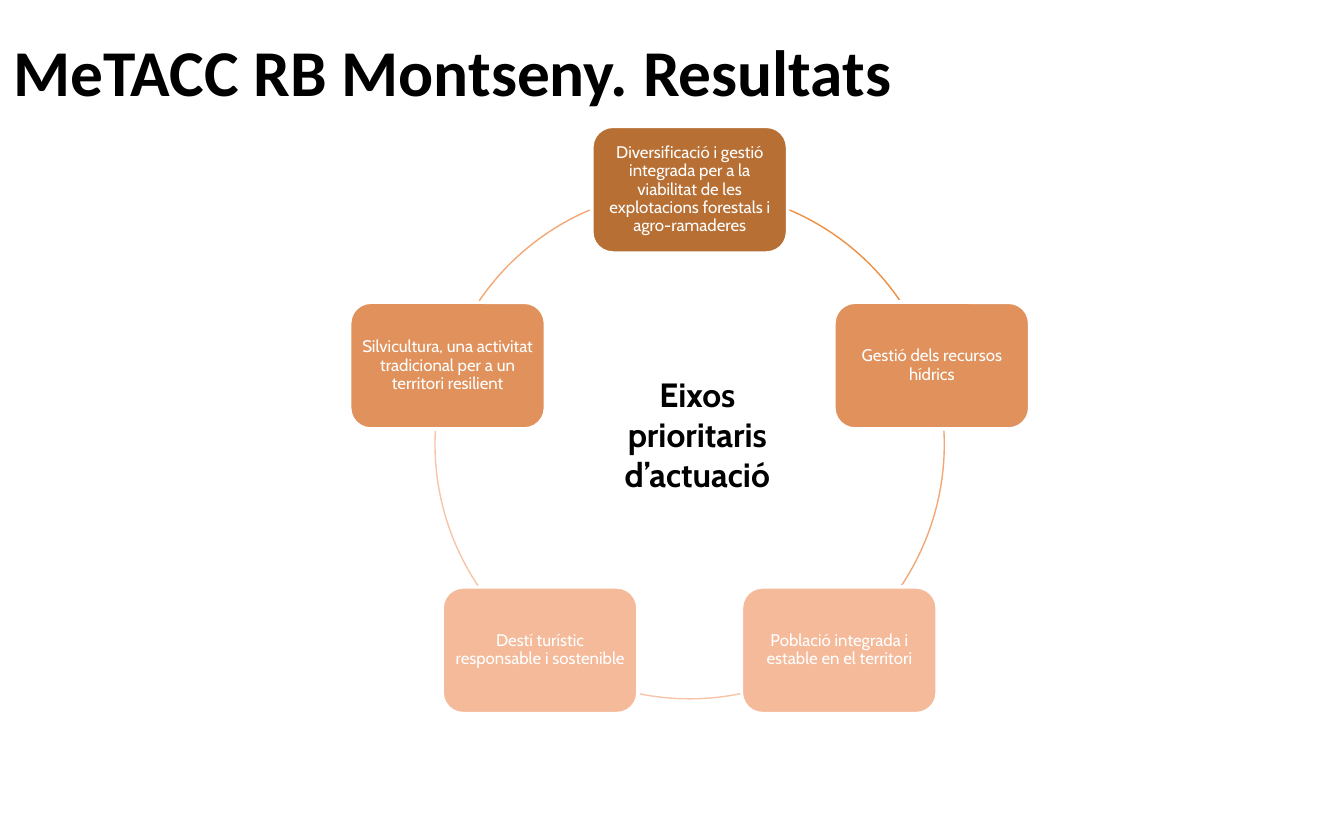
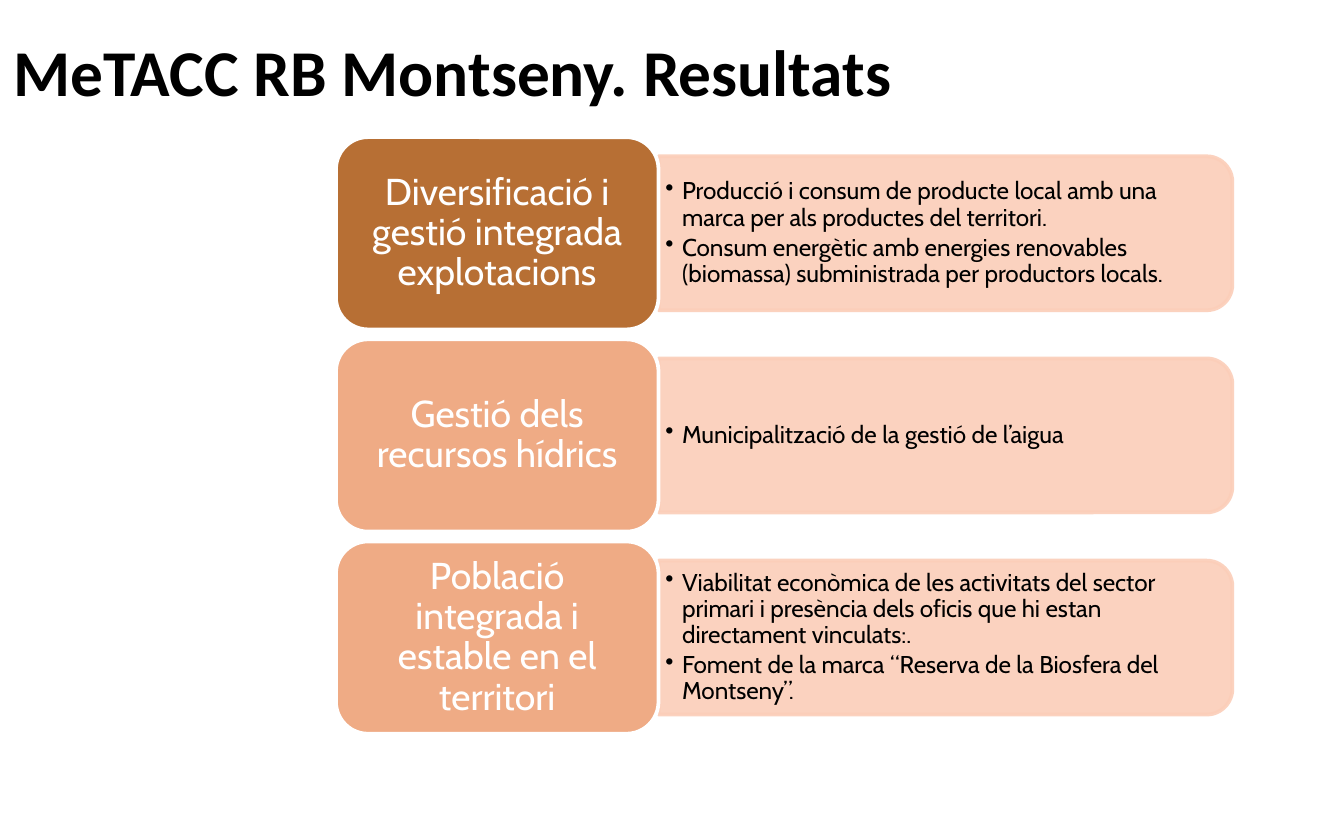
from dataclasses import dataclass
from math import cos, radians, sin

from pptx import Presentation
from pptx.dml.color import RGBColor
from pptx.enum.shapes import MSO_SHAPE as Shape
from pptx.enum.text import MSO_ANCHOR as Anchor, MSO_AUTO_SIZE as AutoSize, PP_ALIGN as Align
from pptx.oxml.ns import qn
from pptx.util import Pt
from lxml.etree import SubElement


@dataclass(frozen=True)
class Theme:
    white: str = "FFFFFF"
    black: str = "000000"
    brown: str = "B76F34"
    copper: str = "E0915C"
    salmon: str = "EFAB85"
    peach: str = "F4BA9A"
    pale: str = "FBCEB9"
    arc_strong: str = "EC8F43"
    arc_medium: str = "F3A774"
    arc_light: str = "F9C3A7"
    heading_font: str = "Calibri"
    body_font: str = "Cabin"
    title_size: float = 35
    head_size: float = 20
    center_size: float = 18
    bullet_size: float = 13
    axis_size: float = 9
    outline: float = 2
    arc_line: float = 0.75


THEME = Theme()
TITLE = "MeTACC RB Montseny. Resultats"


@dataclass(frozen=True)
class Box:
    left: float
    top: float
    width: float
    height: float

    @classmethod
    def around(cls, x: float, y: float, width: float, height: float) -> "Box":
        return cls(x - width / 2, y - height / 2, width, height)

    def lengths(self) -> tuple:
        return Pt(self.left), Pt(self.top), Pt(self.width), Pt(self.height)


@dataclass(frozen=True)
class Axis:
    text: str
    fill: str


@dataclass(frozen=True)
class Arc:
    start: float
    end: float
    color: str


@dataclass(frozen=True)
class Measure:
    head: str
    fill: str
    bullets: tuple


# Clockwise from the top
AXES = (
    Axis("Diversificació i gestió integrada per a la viabilitat de les "
         "explotacions forestals i agro-ramaderes", THEME.brown),
    Axis("Gestió dels recursos hídrics", THEME.copper),
    Axis("Població integrada i estable en el territori", THEME.peach),
    Axis("Destí turístic responsable i sostenible", THEME.peach),
    Axis("Silvicultura, una activitat tradicional per a un territori resilient", THEME.copper),
)
# Degrees clockwise from three o'clock
ARCS = (
    Arc(293.1, 325.7, THEME.arc_strong),
    Arc(357, 33.7, THEME.arc_medium),
    Arc(78.5, 101.5, THEME.arc_light),
    Arc(146.3, 183, THEME.arc_light),
    Arc(214.3, 246.9, THEME.arc_medium),
)
MEASURES = (
    Measure("Diversificació i gestió integrada explotacions", THEME.brown, (
        "Producció i consum de producte local amb una marca per als productes del territori.",
        "Consum energètic amb energies renovables (biomassa) subministrada per productors locals.",
    )),
    Measure("Gestió dels recursos hídrics", THEME.salmon, (
        "Municipalització de la gestió de l’aigua",
    )),
    Measure("Població integrada i estable en el territori", THEME.salmon, (
        "Viabilitat econòmica de les activitats del sector primari i presència "
        "dels oficis que hi estan directament vinculats:.",
        "Foment de la marca “Reserva de la Biosfera del Montseny”.",
    )),
)


def rgb(color: str) -> RGBColor:
    return RGBColor.from_string(color)


def format_text(frame, size: float, color: str, font: str = THEME.body_font,
                bold: bool = False, align=Align.LEFT, spacing: float | None = None) -> None:
    for para in frame.paragraphs:
        para.alignment = align
        if spacing:
            para.line_spacing = spacing
        for span in para.runs:
            span.font.name = font
            span.font.size = Pt(size)
            span.font.bold = bold
            span.font.color.rgb = rgb(color)


def set_frame(frame, horizontal: float, vertical: float) -> None:
    """Wrap and centre the text vertically inside the given insets."""
    frame.word_wrap = True
    frame.vertical_anchor = Anchor.MIDDLE
    frame.margin_left = frame.margin_right = Pt(horizontal)
    frame.margin_top = frame.margin_bottom = Pt(vertical)


def add_page(deck):
    page = deck.slides.add_slide(deck.slide_layouts[5])
    title = page.shapes.title
    title.left, title.top, title.width, title.height = Box(0, 0, 624, 75).lengths()
    frame = title.text_frame
    frame.text = TITLE
    frame.auto_size = AutoSize.NONE
    frame.vertical_anchor = Anchor.MIDDLE
    format_text(frame, THEME.title_size, THEME.black, THEME.heading_font, bold=True)
    return page


def add_filled(page, kind, box: Box, fill: str, line: str):
    shape = page.shapes.add_shape(kind, *box.lengths())
    shape.shadow.inherit = False
    shape.fill.solid()
    shape.fill.fore_color.rgb = rgb(fill)
    shape.line.color.rgb = rgb(line)
    shape.line.width = Pt(THEME.outline)
    return shape


def add_card(page, box: Box, text: str, fill: str, size: float, inset: float) -> None:
    card = add_filled(page, Shape.ROUNDED_RECTANGLE, box, fill, THEME.white)
    frame = card.text_frame
    set_frame(frame, inset, 3)
    frame.text = text
    format_text(frame, size, THEME.white, align=Align.CENTER, spacing=0.9)


def add_arc(page, box: Box, arc: Arc) -> None:
    shape = page.shapes.add_shape(Shape.ARC, *box.lengths())
    shape.shadow.inherit = False
    shape.fill.background()
    shape.line.color.rgb = rgb(arc.color)
    shape.line.width = Pt(THEME.arc_line)
    # Arc angles are stored in 60000ths of a degree, adjustments in 100000ths
    shape.adjustments[0] = arc.start * 0.6
    shape.adjustments[1] = arc.end * 0.6


def add_band(page, box: Box) -> None:
    """Draw a translucent band whose right-hand corners are rounded."""
    x, y = box.left + box.width / 2, box.top + box.height / 2
    upright = Box.around(x, y, box.height, box.width)
    band = add_filled(page, Shape.ROUND_2_SAME_RECTANGLE, upright, THEME.pale, THEME.pale)
    band.rotation = 90
    for color in band._element.spPr.iter(qn("a:srgbClr")):
        SubElement(color, qn("a:alpha"), val="90000")


def add_bullets(page, box: Box, items: tuple) -> None:
    frame = page.shapes.add_textbox(*box.lengths()).text_frame
    set_frame(frame, 3.6, 2)
    frame.text = "\n".join(items)
    indent = Pt(9)
    for index, para in enumerate(frame.paragraphs):
        para.level = 1
        properties = para._p.get_or_add_pPr()
        properties.set("marL", str(indent))
        properties.set("indent", str(-indent))
        SubElement(properties, qn("a:buChar"), char="•")
        if index:
            para.space_before = Pt(2)
    format_text(frame, THEME.bullet_size, THEME.black, spacing=0.9)


def build_axes_page(deck) -> None:
    page = add_page(deck)
    x, y, radius = 369.5, 238, 136.4
    ring = Box.around(x, y, 2 * radius, 2 * radius)
    for index, (axis, arc) in enumerate(zip(AXES, ARCS)):
        angle = radians(index * 360 / len(AXES) - 90)
        spot = Box.around(x + radius * cos(angle), y + radius * sin(angle), 105, 68)
        add_card(page, spot, axis.text, axis.fill, THEME.axis_size, 3)
        add_arc(page, ring, arc)

    frame = page.shapes.add_textbox(*Box(314.6, 196.6, 118, 72.7).lengths()).text_frame
    frame.word_wrap = True
    frame.auto_size = AutoSize.SHAPE_TO_FIT_TEXT
    frame.text = "Eixos prioritaris d’actuació"
    format_text(frame, THEME.center_size, THEME.black, bold=True, align=Align.CENTER)


def build_measures_page(deck) -> None:
    page = add_page(deck)
    left, top, pitch = 180, 73.5, 108.3
    head_width, head_height = 172.8, 103
    band_width, band_height = 307.4, 82.5
    band_left = left + head_width
    for index, measure in enumerate(MEASURES):
        head = Box(left, top + index * pitch, head_width, head_height)
        middle = head.top + head_height / 2
        add_band(page, Box(band_left, middle - band_height / 2, band_width, band_height))
        add_bullets(page, Box(band_left, middle - 37, 303, 74), measure.bullets)
        add_card(page, head, measure.head, measure.fill, THEME.head_size, 6)


def main() -> None:
    deck = Presentation()
    deck.slide_width, deck.slide_height = Pt(720), Pt(450)
    build_axes_page(deck)
    build_measures_page(deck)
    deck.save("out.pptx")


if __name__ == "__main__":
    main()
